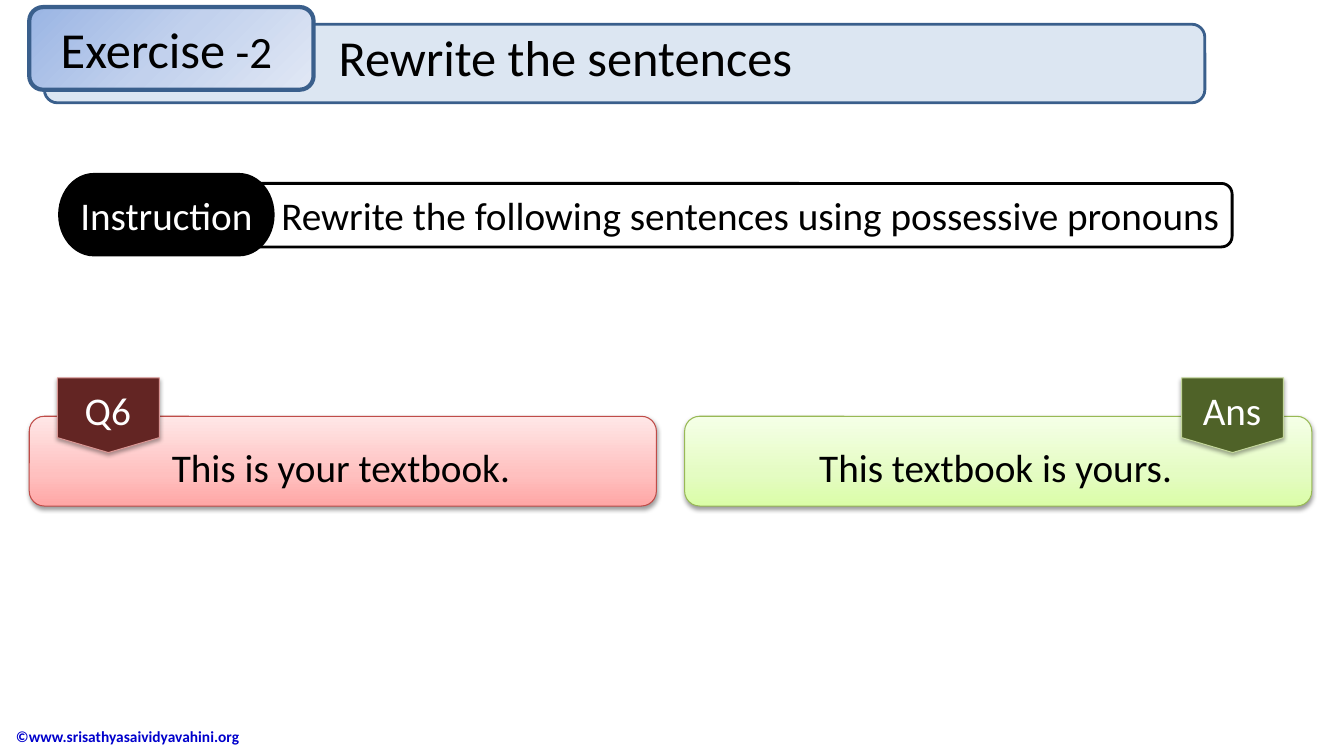
import dataclasses

import lxml.etree
import pptx
import pptx.dml.color
import pptx.enum.shapes
import pptx.enum.text
import pptx.oxml.ns
import pptx.util

Inches = pptx.util.Inches
Pt = pptx.util.Pt
qn = pptx.oxml.ns.qn
RGB = pptx.dml.color.RGBColor.from_string
KIND = pptx.enum.shapes.MSO_SHAPE
ALIGN = pptx.enum.text.PP_ALIGN
MIDDLE = pptx.enum.text.MSO_ANCHOR.MIDDLE


@dataclasses.dataclass(frozen=True)
class Theme:
    font: str = "Calibri"
    black: str = "000000"
    white: str = "FFFFFF"
    link: str = "0000CC"
    band: str = "DCE6F2"
    edge: str = "3A5F8C"
    tab: tuple = ((0, "9AB5E4"), (50, "C2D1ED"), (100, "E1E8F5"))
    rose: tuple = ((0, "FFA6A5"), (35, "FFC0BF"), (100, "FFE7E7"))
    rose_edge: str = "BF4C48"
    rose_tag: str = "632523"
    rose_rim: str = "D99694"
    lime: tuple = ((0, "DAFDA7"), (35, "E4FCC2"), (100, "F5FFE7"))
    lime_edge: str = "98B955"
    lime_tag: str = "4F6228"
    lime_rim: str = "C3D69B"
    title: int = 36
    number: int = 32
    body: int = 28
    small: int = 11


theme = Theme()


def node(parent, tag, **attrs):
    item = lxml.etree.SubElement(parent, qn(tag))
    for key, value in attrs.items():
        item.set(key, str(value))
    return item


def shade(effects, alpha, blur, dist, angle):
    outer = node(effects, "a:outerShdw", blurRad=Pt(blur), dist=Pt(dist),
                 dir=angle * 60000, algn="ctr", rotWithShape=0)
    color = node(outer, "a:srgbClr", val=theme.black)
    node(color, "a:alpha", val=alpha * 1000)


def blend(shape, stops, angle):
    shape.fill.gradient()
    grad = shape._element.spPr.find(qn("a:gradFill"))
    for child in list(grad):
        grad.remove(child)
    row = node(grad, "a:gsLst")
    for place, color in stops:
        stop = node(row, "a:gs", pos=place * 1000)
        node(stop, "a:srgbClr", val=color)
    node(grad, "a:lin", ang=angle * 60000, scaled=0)


def write(shape, parts, color, align=ALIGN.CENTER, glow=False, bold=False):
    """Fill a shape with one line made of (text, size) parts."""
    frame = shape.text_frame
    frame.word_wrap = True
    frame.vertical_anchor = MIDDLE
    line = frame.paragraphs[0]
    line.alignment = align
    for text, size in parts:
        run = line.add_run()
        run.text = text
        run.font.size = Pt(size)
        run.font.bold = bold
        run.font.color.rgb = RGB(color)
        if glow:
            shade(node(run.font._element, "a:effectLst"), 43, 3, 3, 45)
        run.font.name = theme.font


def draw(group, kind, box, fill, edge, width, angle=270, shadow=None):
    shape = group.shapes.add_shape(kind, *map(Inches, box))
    shape.shadow.inherit = False
    if isinstance(fill, str):
        shape.fill.solid()
        shape.fill.fore_color.rgb = RGB(fill)
    else:
        blend(shape, fill, angle)
    shape.line.color.rgb = RGB(edge)
    shape.line.width = Pt(width)
    if shadow:
        shade(shape._element.spPr.find(qn("a:effectLst")), *shadow)
    return shape


def label(group, box, parts, color, **style):
    text = group.shapes.add_textbox(*map(Inches, box))
    write(text, parts, color, **style)
    return text


# Title band with the exercise tab
def header(slide, x, y):
    group = slide.shapes.add_group_shape()
    draw(group, KIND.FLOWCHART_ALTERNATE_PROCESS,
         (x + 0.15, y + 0.17, 11.51, 0.78), theme.band, theme.edge, 2)
    draw(group, KIND.ROUNDED_RECTANGLE, (x, y, 2.82, 0.82),
         theme.tab, theme.edge, 3, angle=45)
    label(group, (x, y + 0.05, 2.82, 0.71),
          [("Exercise", theme.title), (" -2 ", theme.number)],
          theme.black, glow=True)
    label(group, (x + 2.97, y + 0.13, 9, 0.71),
          [("Rewrite the sentences", theme.title)],
          theme.black, align=ALIGN.LEFT, glow=True)


# Instruction bar
def guide(slide, x, y):
    group = slide.shapes.add_group_shape()
    bar = draw(group, KIND.FLOWCHART_ALTERNATE_PROCESS,
               (x + 0.48, y + 0.09, 11.15, 0.63),
               theme.white, theme.black, 2)
    write(bar, [("Rewrite the following sentences using possessive pronouns",
                 theme.body)], theme.black, align=ALIGN.RIGHT)
    pill = draw(group, KIND.FLOWCHART_TERMINATOR, (x, y, 2.12, 0.8),
                theme.black, theme.black, 2)
    write(pill, [("Instruction", theme.body)], theme.white)
    pill.text_frame.word_wrap = False


# Sentence card with a tag hanging over its top edge
def card(slide, x, y, text, tag, inset, shift, fill, edge, dark, rim):
    group = slide.shapes.add_group_shape()
    draw(group, KIND.FLOWCHART_ALTERNATE_PROCESS, (x, y + 0.38, 6.22, 0.89),
         fill, edge, 0.75, shadow=(38, 3.1, 1.6, 90))
    label(group, (x + inset, y + 0.6, 5.97, 0.57), [(text, theme.body)],
          theme.black, glow=True)
    draw(group, KIND.FLOWCHART_OFFPAGE_CONNECTOR,
         (x + shift, y, 1.01, 0.74), dark, rim, 0.75,
         shadow=(35, 3.1, 1.8, 90))
    label(group, (x + shift + 0.08, y + 0.03, 0.84, 0.57),
          [(tag, theme.body)], theme.white)


# Copyright line
def footer(slide, x, y):
    text = label(slide, (x, y, 4.03, 0.41),
                 [("©www.srisathyasaividyavahini.org", theme.small)],
                 theme.link, align=ALIGN.LEFT, bold=True)
    props = text.text_frame.paragraphs[0]._p.get_or_add_pPr()
    props.set("marL", str(Inches(0.5)))


def main():
    deck = pptx.Presentation()
    deck.slide_width = Inches(13.33)
    deck.slide_height = Inches(7.5)
    slide = deck.slides.add_slide(deck.slide_layouts[6])
    footer(slide, -0.44, 7.1)
    header(slide, 0.29, 0.07)
    guide(slide, 0.59, 1.73)
    card(slide, 0.29, 3.75, "This is your textbook. ", "Q6", 0.15, 0.28,
         theme.rose, theme.rose_edge, theme.rose_tag, theme.rose_rim)
    card(slide, 6.79, 3.75, "This textbook is yours.", "Ans", 0.1, 4.93,
         theme.lime, theme.lime_edge, theme.lime_tag, theme.lime_rim)
    deck.save("out.pptx")


if __name__ == "__main__":
    main()
